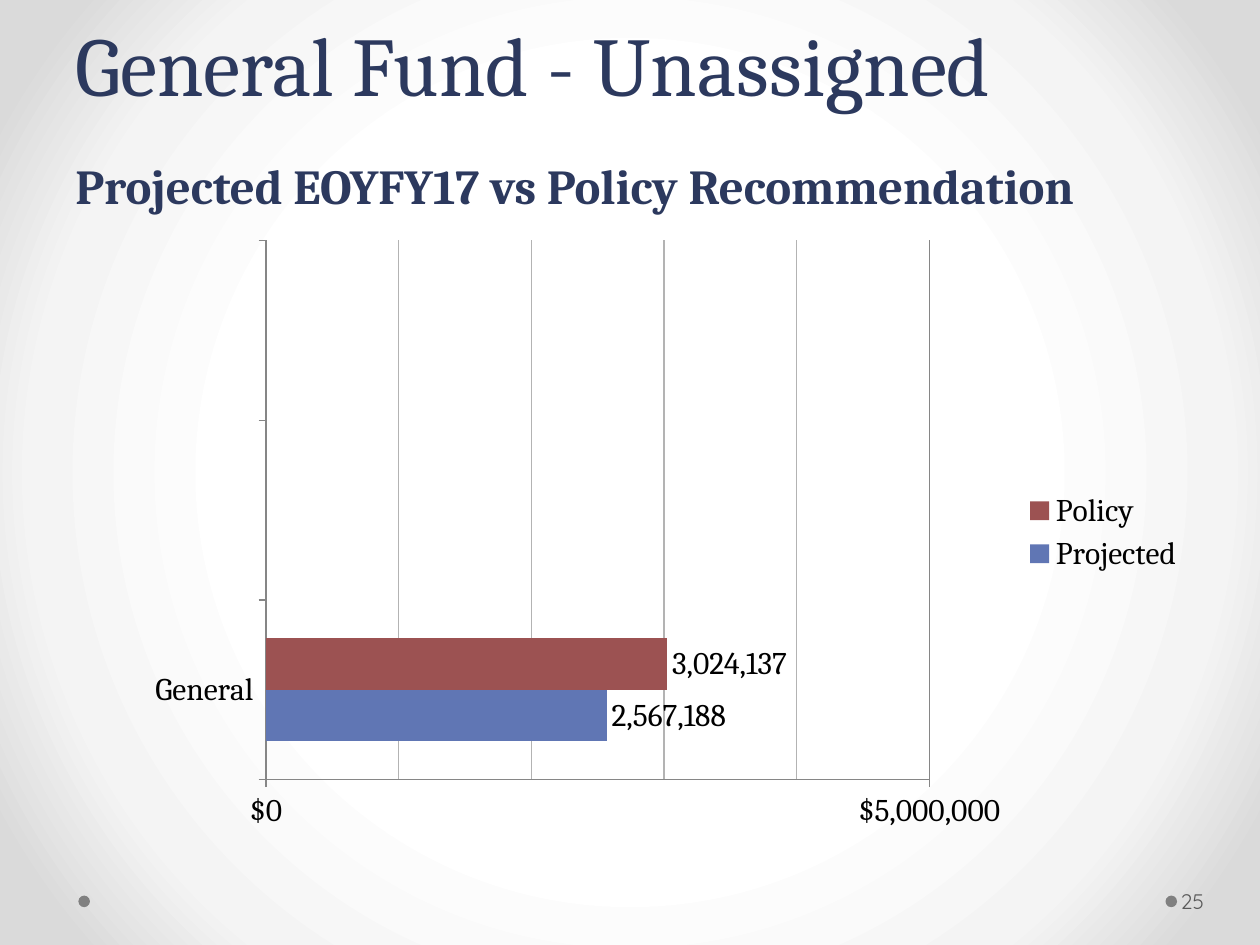
from pptx import Presentation
from pptx.chart.data import CategoryChartData
from pptx.dml.color import RGBColor
from pptx.enum.chart import XL_CHART_TYPE, XL_LABEL_POSITION, XL_LEGEND_POSITION, XL_TICK_MARK
from pptx.enum.shapes import MSO_SHAPE
from pptx.enum.text import MSO_ANCHOR
from pptx.oxml import parse_xml
from pptx.oxml.ns import nsdecls, qn
from pptx.util import Pt

NAVY = RGBColor(0x2C, 0x39, 0x5E)
BLUE = RGBColor(0x60, 0x76, 0xB4)
RED = RGBColor(0x9C, 0x52, 0x52)
BLACK = RGBColor(0, 0, 0)
DOT_GREY = RGBColor(0x80, 0x80, 0x80)
NUMBER_GREY = RGBColor(0x59, 0x59, 0x59)
AXIS_GREY = RGBColor(0x86, 0x86, 0x86)
GRID_GREY = RGBColor(0xB3, 0xB3, 0xB3)


def add_text(slide, lines, left, top, width, height, *, font, color, anchor,
             line_spacing=None, margin_left=7.2, margin_right=7.2):
    """Add one paragraph; lines holds (text, size, bold), parted by line breaks."""
    shape = slide.shapes.add_textbox(Pt(left), Pt(top), Pt(width), Pt(height))
    frame = shape.text_frame
    frame.word_wrap = True
    frame.vertical_anchor = anchor
    frame.margin_left, frame.margin_right = Pt(margin_left), Pt(margin_right)
    paragraph = frame.paragraphs[0]
    if line_spacing:
        paragraph.line_spacing = Pt(line_spacing)
    for index, (text, size, bold) in enumerate(lines):
        if index:
            paragraph.add_line_break()
        run = paragraph.add_run()
        run.text = text
        run.font.name, run.font.size, run.font.bold = font, Pt(size), bold
        run.font.color.rgb = color


presentation = Presentation()
presentation.slide_width, presentation.slide_height = Pt(720), Pt(540)
slide = presentation.slides.add_slide(presentation.slide_layouts[6])

# Background: round gradient, white in the middle
slide.background.fill.gradient()
gradient = next(slide.element.iter(qn("a:gradFill")))
stops = "".join(f'<a:gs pos="{position}000"><a:srgbClr val="{color}"/></a:gs>'
                for position, color in ((50, "FFFFFF"), (76, "F4F4F4"), (92, "DADADA")))
gradient.getparent().replace(gradient, parse_xml(
    f'<a:gradFill {nsdecls("a")} rotWithShape="1"><a:gsLst>{stops}</a:gsLst><a:path path="circle">'
    '<a:fillToRect l="50000" t="50000" r="50000" b="50000"/></a:path></a:gradFill>'))

# Footer dots
for left in (666, 44.8):
    dot = slide.shapes.add_shape(MSO_SHAPE.OVAL, Pt(left), Pt(511.8), Pt(6.6), Pt(6.6))
    dot.shadow.inherit = False
    dot.fill.solid()
    dot.fill.fore_color.rgb = DOT_GREY
    dot.line.fill.background()

# Title and subtitle
add_text(slide, [("General Fund - Unassigned", 47.7, False),
                 ("Projected EOYFY17 vs Policy Recommendation", 27.9, True)],
         36, 0, 648, 126, font="Cambria", color=NAVY, anchor=MSO_ANCHOR.BOTTOM,
         line_spacing=58)

# Bar chart; the last two categories are empty
chart_data = CategoryChartData()
chart_data.categories = ["General", "", ""]
chart_data.add_series("Projected", [2567188, None, None])
chart_data.add_series("Policy ", [3024137, None, None])
chart = slide.shapes.add_chart(XL_CHART_TYPE.BAR_CLUSTERED, Pt(36), Pt(126), Pt(648), Pt(356.4),
                               chart_data).chart
chart.has_title = False
chart.font.name, chart.font.size = "Cambria", Pt(18)
chart.font.color.rgb = BLACK
chart.has_legend = True
chart.legend.position = XL_LEGEND_POSITION.RIGHT
chart.legend.include_in_layout = False

# Bars and their values
plot = chart.plots[0]
plot.gap_width, plot.overlap = 150, 0
plot.vary_by_categories = False
for series, color in zip(plot.series, (BLUE, RED)):
    series.format.fill.solid()
    series.format.fill.fore_color.rgb = color
    labels = series.data_labels
    labels.show_value = True
    labels.position = XL_LABEL_POSITION.OUTSIDE_END
    labels.number_format, labels.number_format_is_linked = "#,##0", False

# Axes and major gridlines
value_axis = chart.value_axis
value_axis.minimum_scale, value_axis.maximum_scale = 0, 5000000
value_axis.major_unit, value_axis.minor_unit = 5000000, 1000000
value_axis.tick_labels.number_format = '"$"#,##0'
value_axis.tick_labels.number_format_is_linked = False
value_axis.has_major_gridlines = value_axis.has_minor_gridlines = True
for part in (value_axis, chart.category_axis, value_axis.major_gridlines):
    part.format.line.color.rgb = AXIS_GREY
    part.format.line.width = Pt(0.75)
for axis in (value_axis, chart.category_axis):
    axis.major_tick_mark = XL_TICK_MARK.OUTSIDE
    axis.minor_tick_mark = XL_TICK_MARK.NONE

# Minor gridlines, one per million
minor_gridlines = next(chart.element.iter(qn("c:minorGridlines")))
minor_gridlines.append(parse_xml(
    f'<c:spPr {nsdecls("c", "a")}><a:ln w="{Pt(0.75)}"><a:solidFill>'
    f'<a:srgbClr val="{GRID_GREY}"/></a:solidFill></a:ln></c:spPr>'))

# Fixed place of the plot inside the chart
plot_area = next(chart.element.iter(qn("c:plotArea")))
for layout in plot_area.findall(qn("c:layout")):
    plot_area.remove(layout)
plot_area.insert(0, parse_xml(
    f'<c:layout {nsdecls("c")}><c:manualLayout><c:layoutTarget val="inner"/>'
    '<c:xMode val="edge"/><c:yMode val="edge"/><c:x val="0.179"/><c:y val="0.032"/>'
    '<c:w val="0.585"/><c:h val="0.865"/></c:manualLayout></c:layout>'))

# Slide number
add_text(slide, [("25", 12, False)], 672.5, 500.4, 44, 28.8, font="Quicksand",
         color=NUMBER_GREY, anchor=MSO_ANCHOR.MIDDLE, margin_left=2.2, margin_right=3.6)

presentation.save("out.pptx")
